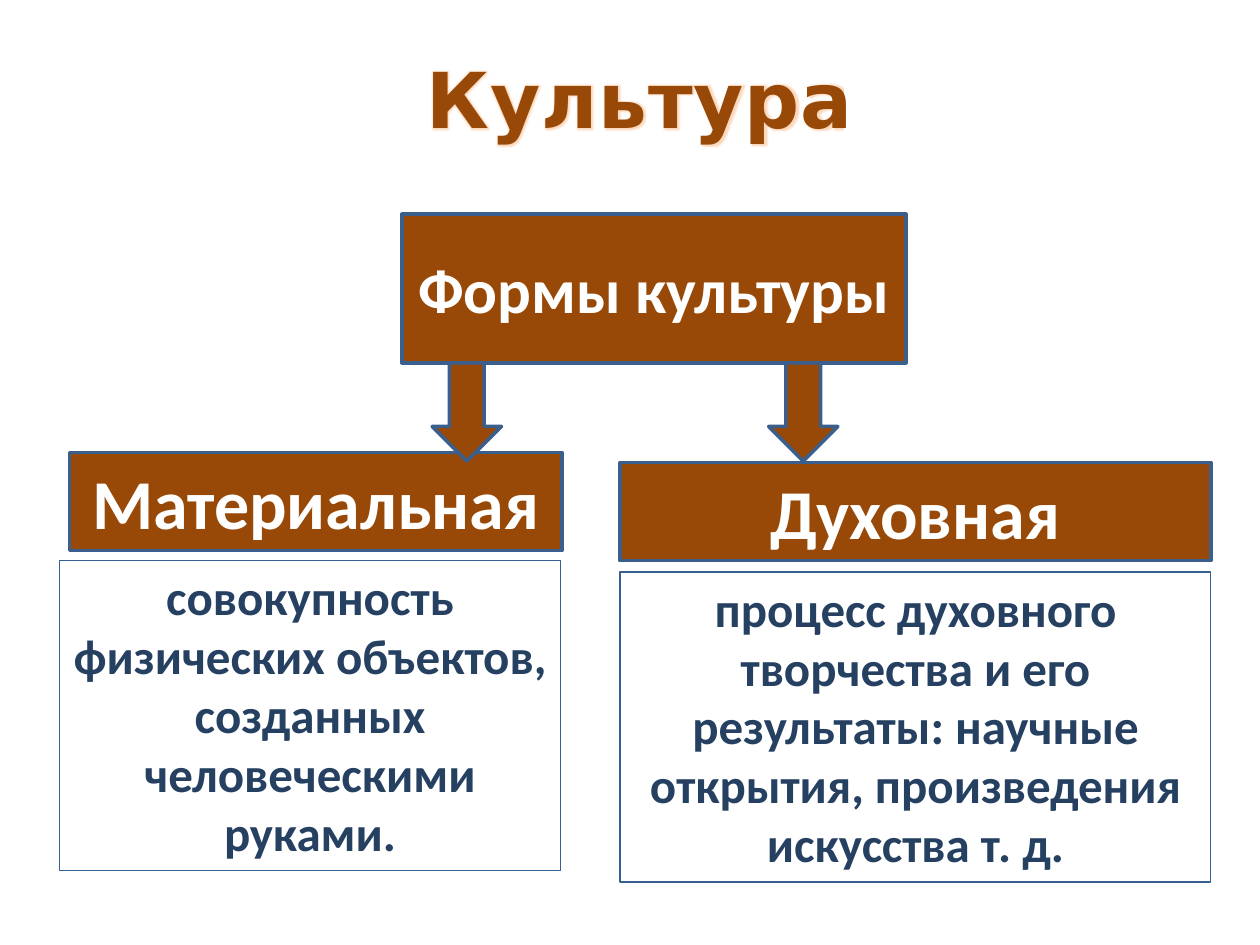
from lxml import etree
from pptx import Presentation
from pptx.dml.color import RGBColor
from pptx.enum.shapes import MSO_SHAPE
from pptx.enum.text import MSO_ANCHOR, MSO_AUTO_SIZE, PP_ALIGN
from pptx.oxml.ns import qn
from pptx.util import Inches, Pt

RECTANGLE = MSO_SHAPE.RECTANGLE
DOWN_ARROW = MSO_SHAPE.DOWN_ARROW
CENTER = PP_ALIGN.CENTER
TOP, MIDDLE = MSO_ANCHOR.TOP, MSO_ANCHOR.MIDDLE
GROW = MSO_AUTO_SIZE.SHAPE_TO_FIT_TEXT

BROWN = RGBColor(0x98, 0x48, 0x07)
BLUE = RGBColor(0x3A, 0x5F, 0x8C)
THIN_BLUE = RGBColor(0x37, 0x60, 0x92)
NAVY = RGBColor(0x25, 0x40, 0x61)
WHITE = RGBColor(0xFF, 0xFF, 0xFF)
GLOW = "FAC090"

# Content: each form has a heading box, a definition box and an arrow
TITLE = "Культура"
ROOT = "Формы культуры"
FORMS = [
    {
        "heading": "Материальная",
        "heading_box": (0.55, 3.59, 3.91, 0.78),
        "definition": "совокупность физических объектов, созданных "
                      "человеческими руками.",
        "definition_box": (0.47, 4.45, 3.98, 2.46),
        "arrow_left": 3.43,
    },
    {
        "heading": "Духовная",
        "heading_box": (4.92, 3.67, 4.69, 0.78),
        "definition": "процесс духовного творчества и его результаты: "
                      "научные открытия, произведения искусства т. д.",
        "definition_box": (4.92, 4.54, 4.69, 2.46),
        "arrow_left": 6.1,
    },
]
ROOT_BOX = (3.19, 1.7, 4, 1.18)
TITLE_BOX = (0.33, 0.36, 9.5, 0.84)
ARROW_SIZE = (0.55, 0.78)


def write(shape, text, size, color, anchor, font="Calibri"):
    frame = shape.text_frame
    frame.word_wrap = True
    frame.vertical_anchor = anchor
    paragraph = frame.paragraphs[0]
    paragraph.alignment = CENTER
    run = paragraph.add_run()
    run.text = text
    run.font.name = font
    run.font.size = Pt(size)
    run.font.bold = True
    run.font.color.rgb = color
    return run


def add_block(slide, kind, box, fill=BROWN, line=BLUE, width=2):
    shape = slide.shapes.add_shape(kind, *map(Inches, box))
    shape.shadow.inherit = False
    shape.fill.solid()
    shape.fill.fore_color.rgb = fill
    shape.line.color.rgb = line
    shape.line.width = Pt(width)
    return shape


def add_title(slide):
    box = slide.shapes.add_textbox(*map(Inches, TITLE_BOX))
    run = write(box, TITLE, 44, BROWN, TOP, "DejaVu Sans")
    box.text_frame.auto_size = GROW
    # Letter spacing and a soft glow behind the letters
    properties = run.font._element
    properties.set("spc", "50")
    effects = etree.Element(qn("a:effectLst"))
    glow = etree.SubElement(effects, qn("a:glow"), rad=str(Pt(3)))
    color = etree.SubElement(glow, qn("a:srgbClr"), val=GLOW)
    etree.SubElement(color, qn("a:alpha"), val="60000")
    properties.find(qn("a:solidFill")).addnext(effects)


presentation = Presentation()
presentation.slide_width = Inches(10)
presentation.slide_height = Inches(7.5)
slide = presentation.slides.add_slide(presentation.slide_layouts[6])

# Root and headings
write(add_block(slide, RECTANGLE, ROOT_BOX), ROOT, 36, WHITE, MIDDLE)
for form in FORMS:
    heading = add_block(slide, RECTANGLE, form["heading_box"])
    write(heading, form["heading"], 40, WHITE, MIDDLE)

# Arrows from the bottom of the root, and definitions
arrow_top = ROOT_BOX[1] + ROOT_BOX[3]
for form in FORMS:
    add_block(slide, DOWN_ARROW, (form["arrow_left"], arrow_top, *ARROW_SIZE))
    definition = add_block(slide, RECTANGLE, form["definition_box"],
                           WHITE, THIN_BLUE, 0.75)
    write(definition, form["definition"], 28, NAVY, TOP)
    definition.text_frame.auto_size = GROW

add_title(slide)
presentation.save("out.pptx")
